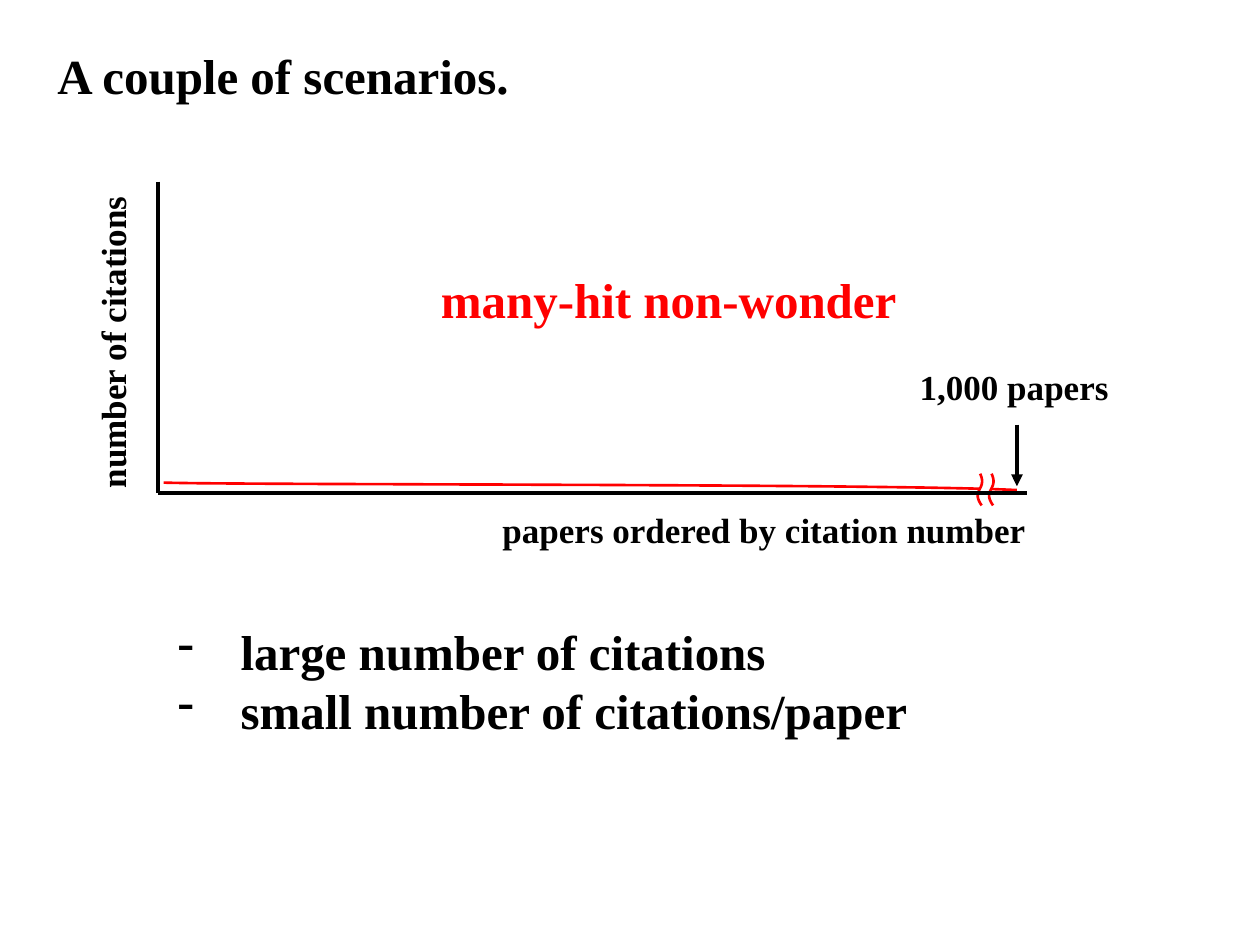
"""Build the slide that sketches the many-hit non-wonder citation scenario."""
from lxml import etree
from pptx import Presentation
from pptx import util as u
from pptx.dml import color as c
from pptx.enum import shapes as s, text as t
from pptx.oxml import ns

COLORS = {"ink": "000000", "accent": "FF0000", "paper": "FFFFFF"}
LARGE, SMALL = 28, 20
AXIS_X, AXIS_Y = 3.18, 9.93
CURVE_END = 20.5


def rgb(name):
    """Return the named palette colour."""
    return c.RGBColor.from_string(COLORS[name])


def set_attributes(target, values):
    """Set every attribute in a dict of format values."""
    for name, value in values.items():
        setattr(target, name, value)


def add_bullet(paragraph):
    """Give a paragraph a hanging dash bullet."""
    properties = paragraph._p.get_or_add_pPr()
    properties.set("marL", str(u.Cm(1.27)))
    properties.set("indent", str(-u.Cm(1.27)))
    etree.SubElement(properties, ns.qn("a:buFontTx"))
    etree.SubElement(properties, ns.qn("a:buChar")).set("char", "-")


def add_label(slide, box, lines, size, color="ink", rotation=0, bullets=False):
    """Add a bold text box with one paragraph per line."""
    shape = slide.shapes.add_textbox(*map(u.Cm, box))
    shape.rotation = rotation
    frame = shape.text_frame
    set_attributes(frame, {"word_wrap": False, "auto_size": t.MSO_AUTO_SIZE.SHAPE_TO_FIT_TEXT})
    frame.text = "\n".join(lines)
    for paragraph in frame.paragraphs:
        if bullets:
            add_bullet(paragraph)
        font = paragraph.runs[0].font
        set_attributes(font, {"name": "Times New Roman", "size": u.Pt(size), "bold": True})
        font.color.rgb = rgb(color)


def bezier(points, steps=32):
    """Sample a cubic Bezier curve from its four control points."""
    weights = (1, 3, 3, 1)
    return [
        tuple(
            sum(w * (1 - i / steps) ** (3 - k) * (i / steps) ** k * point[axis]
                for k, (w, point) in enumerate(zip(weights, points)))
            for axis in (0, 1)
        )
        for i in range(steps + 1)
    ]


def add_outline(slide, points, color, width, filled=False):
    """Add a freeform that is closed when filled and open otherwise."""
    vertices = [(u.Cm(x), u.Cm(y)) for x, y in points]
    builder = slide.shapes.build_freeform(*vertices[0])
    builder.add_line_segments(vertices[1:], close=filled)
    shape = builder.convert_to_shape()
    shape.shadow.inherit = False
    if filled:
        shape.fill.solid()
        shape.fill.fore_color.rgb = rgb(color)
    else:
        shape.fill.background()
    shape.line.color.rgb = rgb(color)
    shape.line.width = u.Pt(width)


def add_line(slide, start, end, arrow=False):
    """Add a straight black line, with an arrowhead at its end if asked."""
    line = slide.shapes.add_connector(s.MSO_CONNECTOR.STRAIGHT, *map(u.Cm, start + end))
    line.line.color.rgb = rgb("ink")
    line.line.width = u.Pt(2.25)
    if arrow:
        etree.SubElement(line.line._get_or_add_ln(), ns.qn("a:tailEnd")).set("type", "triangle")
    etree.SubElement(line._element.spPr, ns.qn("a:effectLst"))


def add_citation_curve(slide):
    """Draw the flat citation curve with its break mark."""
    curve = [(CURVE_END, 9.88), (17.91, 9.75), (4.8, 9.78), (3.3, 9.73)]
    add_outline(slide, bezier(curve), "accent", 1.5)
    gap = [(19.71, 9.98), (19.94, 9.96), (19.99, 9.78), (19.81, 9.78)]
    add_outline(slide, gap, "paper", 0.75, filled=True)
    stroke = [(19.76, 9.55), (19.91, 9.88), (19.56, 9.86), (19.79, 10.19)]
    for offset in (0, 0.23):
        add_outline(slide, bezier([(x + offset, y) for x, y in stroke]), "accent", 1.5)


def main():
    """Build and save the presentation."""
    presentation = Presentation()
    set_attributes(presentation, {"slide_width": u.Cm(25.4), "slide_height": u.Cm(19.05)})
    slide = presentation.slides.add_slide(presentation.slide_layouts[6])

    add_label(slide, (0.91, 0.79, 9.7, 1.45), ["A couple of scenarios."], LARGE)
    add_label(slide, (-0.94, 6.32, 6.43, 1.12), ["number of citations"], SMALL, rotation=270)
    add_citation_curve(slide)
    add_label(slide, (8.64, 5.31, 9.8, 1.45), ["many-hit non-wonder"], LARGE, "accent")
    findings = ["large number of citations", "small number of citations/paper"]
    add_label(slide, (3.33, 12.4, 15.39, 2.64), findings, LARGE, bullets=True)

    origin = (AXIS_X, AXIS_Y)
    add_line(slide, (AXIS_X, 3.66), origin)
    add_line(slide, origin, (20.7, AXIS_Y))
    add_label(slide, (18.29, 7.24, 4.34, 1.12), ["1,000 papers"], SMALL)
    add_line(slide, (CURVE_END, 8.56), (CURVE_END, 9.8), arrow=True)
    add_label(slide, (9.88, 10.13, 11.13, 1.12), ["papers ordered by citation number"], SMALL)

    presentation.save("out.pptx")


if __name__ == "__main__":
    main()
